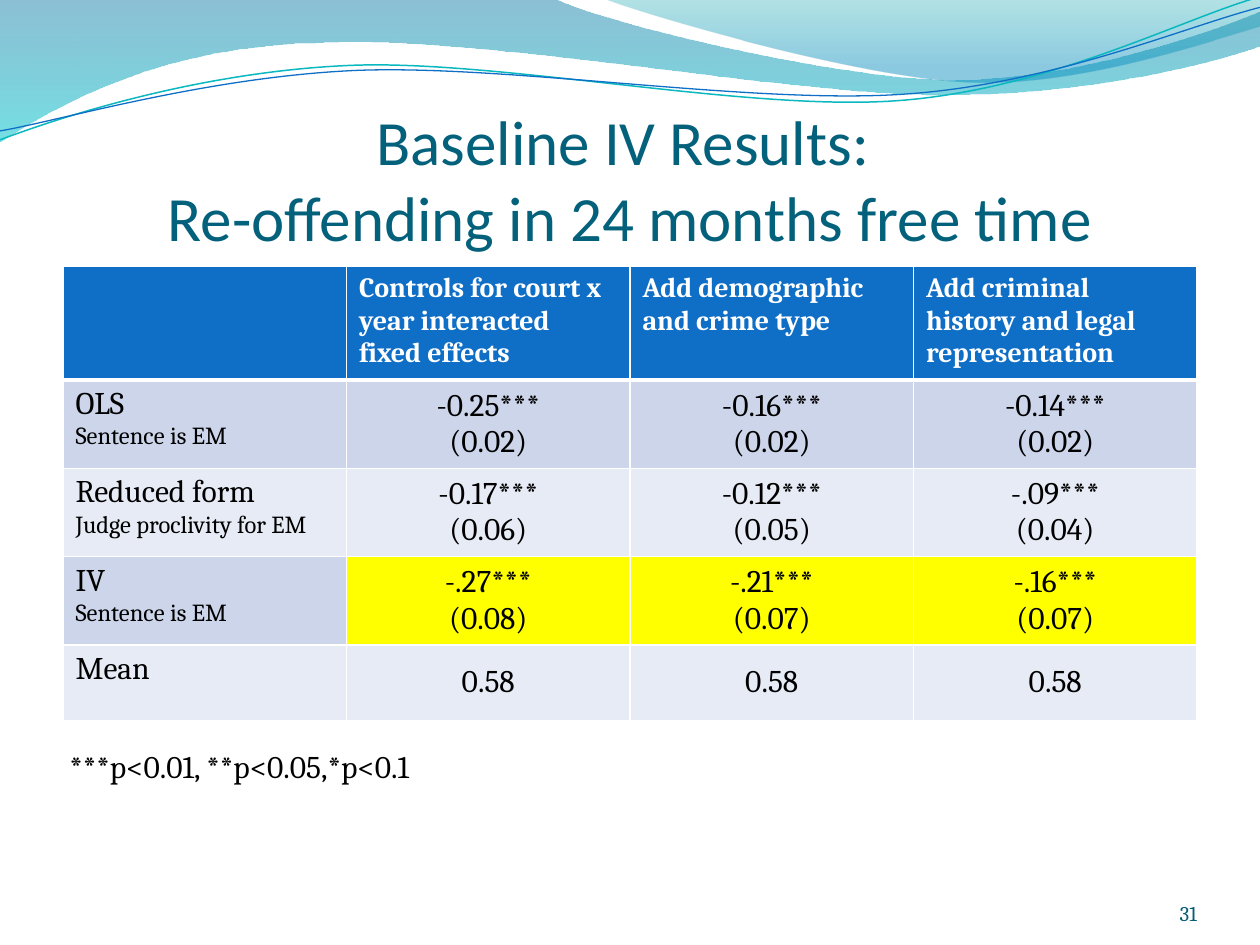
import pptx
import pptx.util
import pptx.dml.color
import pptx.enum.text
import lxml.etree

Cm = pptx.util.Cm
Pt = pptx.util.Pt
RGB = pptx.dml.color.RGBColor.from_string
ALIGN = pptx.enum.text.PP_ALIGN
ANCHOR = pptx.enum.text.MSO_ANCHOR
NS = "{http://schemas.openxmlformats.org/drawingml/2006/main}"

colors = {
    "title": "04617B", "number": "045C75", "text": "000000", "white": "FFFFFF",
    "header": "0F6FC6", "band": "CCD5EA", "light": "E7EBF5", "highlight": "FFFF00",
    "teal": "0AB8BF",
}

prs = pptx.Presentation()
prs.slide_width = Cm(25.4)
prs.slide_height = Cm(19.05)
s = prs.slides.add_slide(prs.slide_layouts[6])


def add_run(p, text, size, color, font="Cambria", bold=False):
    r = p.add_run()
    r.text = text
    r.font.size = Pt(size)
    r.font.name = font
    r.font.bold = bold
    r.font.color.rgb = RGB(color)


def add_curve(start, segments, close):
    fb = s.shapes.build_freeform(Cm(start[0]), Cm(start[1]))
    fb.add_line_segments([(Cm(seg[-2]), Cm(seg[-1])) for seg in segments], close=close)
    sp = fb.convert_to_shape()
    sp.shadow.inherit = False
    for line, seg in zip(list(sp._element.iter(NS + "lnTo")), segments):
        if len(seg) == 6:
            curve = lxml.etree.Element(NS + "cubicBezTo")
            for x, y in zip(seg[::2], seg[1::2]):
                lxml.etree.SubElement(curve, NS + "pt", x=str(Cm(x) - sp.left), y=str(Cm(y) - sp.top))
            line.getparent().replace(line, curve)
    return sp


waves = [
    ((0, -0.03),
     [(11.18, -0.03), (12.09, 0.43, 16.87, 1.6, 19.25, 1.6),
      (21.67, 1.6, 24.33, 0.66, 25.4, 0.23), (25.43, 0.91),
      (24.97, 1.12, 22.1, 1.93, 18.95, 1.91), (15.8, 1.91, 9.7, 0.71, 6.53, 0.86),
      (3.28, 0.89, 1.17, 2.11, -0.03, 2.87)],
     [(0, "0074A1", 45), (1, "00C6CF", 55)]),
    ((12.17, -0.03),
     [(12.93, 0.28, 17.32, 1.57, 19.53, 1.65), (21.74, 1.75, 24.41, 0.81, 25.4, 0.53), (25.4, 0)],
     [(0, "00A1A9", 30), (0.8, "008BBF", 45)]),
]
for start, segments, stops in waves:
    sp = add_curve(start, segments, True)
    sp.line.fill.background()
    sp.fill.gradient()
    sp.fill.gradient_angle = 270
    for stop, (position, color, alpha) in zip(sp.fill.gradient_stops, stops):
        stop.position = position
        stop.color.rgb = RGB(color)
    for clr, (position, color, alpha) in zip(sp._element.spPr.iter(NS + "srgbClr"), stops):
        lxml.etree.SubElement(clr, NS + "alpha", val=str(alpha * 1000))

strands = [
    ((0, 2.82),
     [(1.22, 2.36, 4.01, 1.45, 7.04, 1.32), (10.03, 1.19, 15.06, 2.26, 18.11, 2.03),
      (21.16, 1.8, 23.83, 0.38, 25.35, -0.05)], "teal", 0.85),
    ((0, 2.64),
     [(1.19, 2.44, 4.17, 1.55, 7.19, 1.42), (10.24, 1.3, 15.16, 2.11, 18.21, 1.9),
      (21.23, 1.7, 23.9, 0.53, 25.4, 0.15)], "header", 0.75),
]
for start, segments, color, width in strands:
    sp = add_curve(start, segments, False)
    sp.fill.background()
    sp.line.color.rgb = RGB(colors[color])
    sp.line.width = Pt(width)

tf = s.shapes.add_textbox(Cm(1.27), Cm(1.95), Cm(22.86), Cm(3.17)).text_frame
tf.word_wrap = True
tf.vertical_anchor = ANCHOR.BOTTOM
tf.margin_left = tf.margin_right = tf.margin_bottom = 0
p = tf.paragraphs[0]
p.alignment = ALIGN.CENTER
add_run(p, "Baseline IV Results: ", 36, colors["title"], "Calibri")
p.add_line_break()
add_run(p, "Re-offending in 24 months free time", 36, colors["title"], "Calibri")

rows = [
    [[], ["Controls for court x year interacted fixed effects"],
     ["Add demographic and crime type"], ["Add criminal history and legal representation"]],
    [["OLS", "Sentence is EM"], ["-0.25***", "(0.02)"], ["-0.16***", "(0.02)"], ["-0.14***", "(0.02)"]],
    [["Reduced form", "Judge proclivity for EM"],
     ["-0.17***", "(0.06)"], ["-0.12***", "(0.05)"], ["-.09***", "(0.04)"]],
    [["IV", "Sentence is EM"], ["-.27***", "(0.08)"], ["-.21***", "(0.07)"], ["-.16***", "(0.07)"]],
    [["Mean"], ["0.58"], ["0.58"], ["0.58"]],
]
heights = [2.29, 1.78, 1.78, 1.78, 1.52]
table = s.shapes.add_table(5, 4, Cm(1.27), Cm(5.37), Cm(22.86), Cm(sum(heights))).table
for column in table.columns:
    column.width = Cm(22.86 / 4)
for i, row in enumerate(rows):
    table.rows[i].height = Cm(heights[i])
    for j, lines in enumerate(row):
        cell = table.cell(i, j)
        fill = "header" if i == 0 else "highlight" if i == 3 and j else "band" if i % 2 else "light"
        cell.fill.solid()
        cell.fill.fore_color.rgb = RGB(colors[fill])
        is_value = i > 0 and j > 0
        cell.vertical_anchor = ANCHOR.MIDDLE if is_value else ANCHOR.TOP
        for k, text in enumerate(lines):
            p = cell.text_frame.add_paragraph() if k else cell.text_frame.paragraphs[0]
            p.alignment = ALIGN.CENTER if is_value else ALIGN.LEFT
            size = 16 if i == 0 else 14 if j == 0 and k else 18
            add_run(p, text, size, colors["text" if i else "white"], bold=i == 0)
        tcPr = cell._tc.get_or_add_tcPr()
        for n, side in enumerate(["lnL", "lnR", "lnT", "lnB"]):
            thick = (i, side) in [(0, "lnB"), (1, "lnT")]
            ln = lxml.etree.Element(NS + side, w=str(Pt(3 if thick else 1)))
            solid = lxml.etree.SubElement(ln, NS + "solidFill")
            lxml.etree.SubElement(solid, NS + "srgbClr", val=colors["white"])
            tcPr.insert(n, ln)

tf = s.shapes.add_textbox(Cm(22.02), Cm(17.65), Cm(2.11), Cm(1.02)).text_frame
tf.word_wrap = True
tf.vertical_anchor = ANCHOR.BOTTOM
tf.margin_left = tf.margin_right = tf.margin_top = tf.margin_bottom = 0
p = tf.paragraphs[0]
p.alignment = ALIGN.RIGHT
add_run(p, "31", 12, colors["number"])

tf = s.shapes.add_textbox(Cm(1.15), Cm(14.94), Cm(16.2), Cm(1.03)).text_frame
tf.word_wrap = True
add_run(tf.paragraphs[0], "***p<0.01, **p<0.05,*p<0.1", 18, colors["text"])

prs.save("out.pptx")
